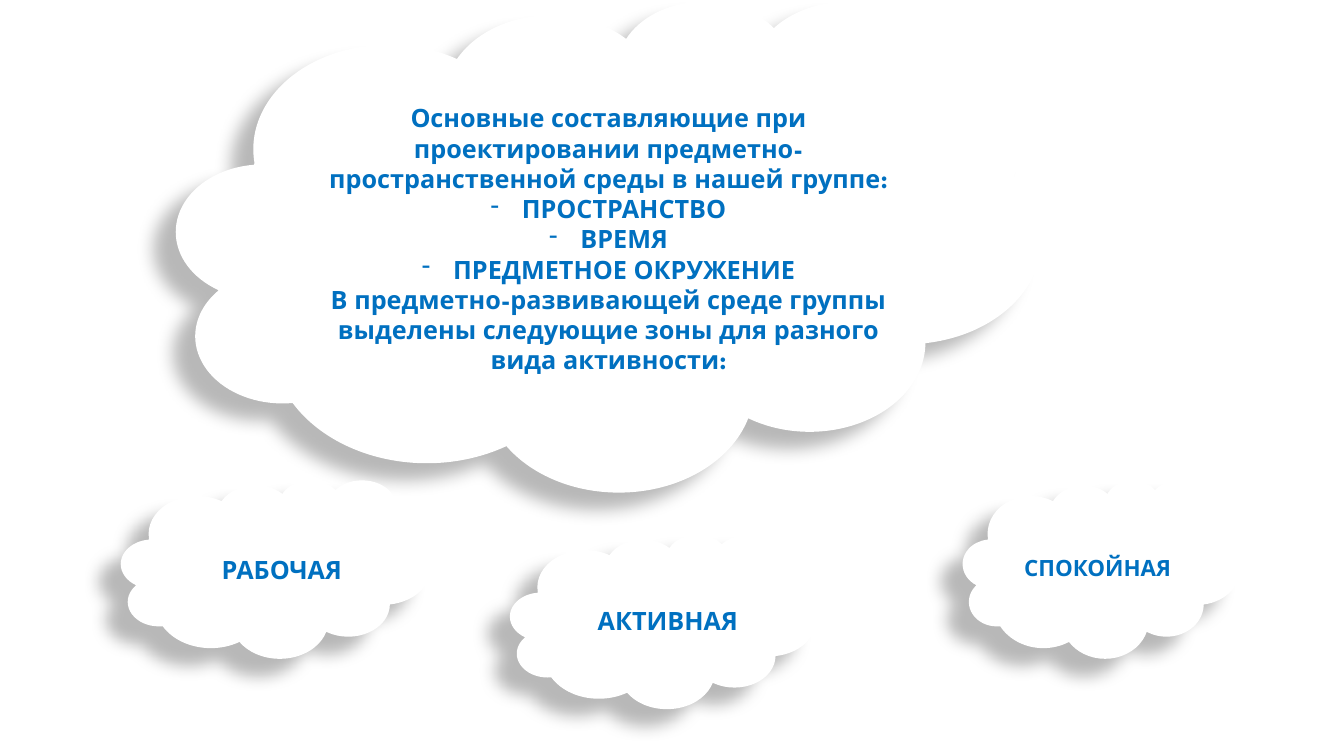
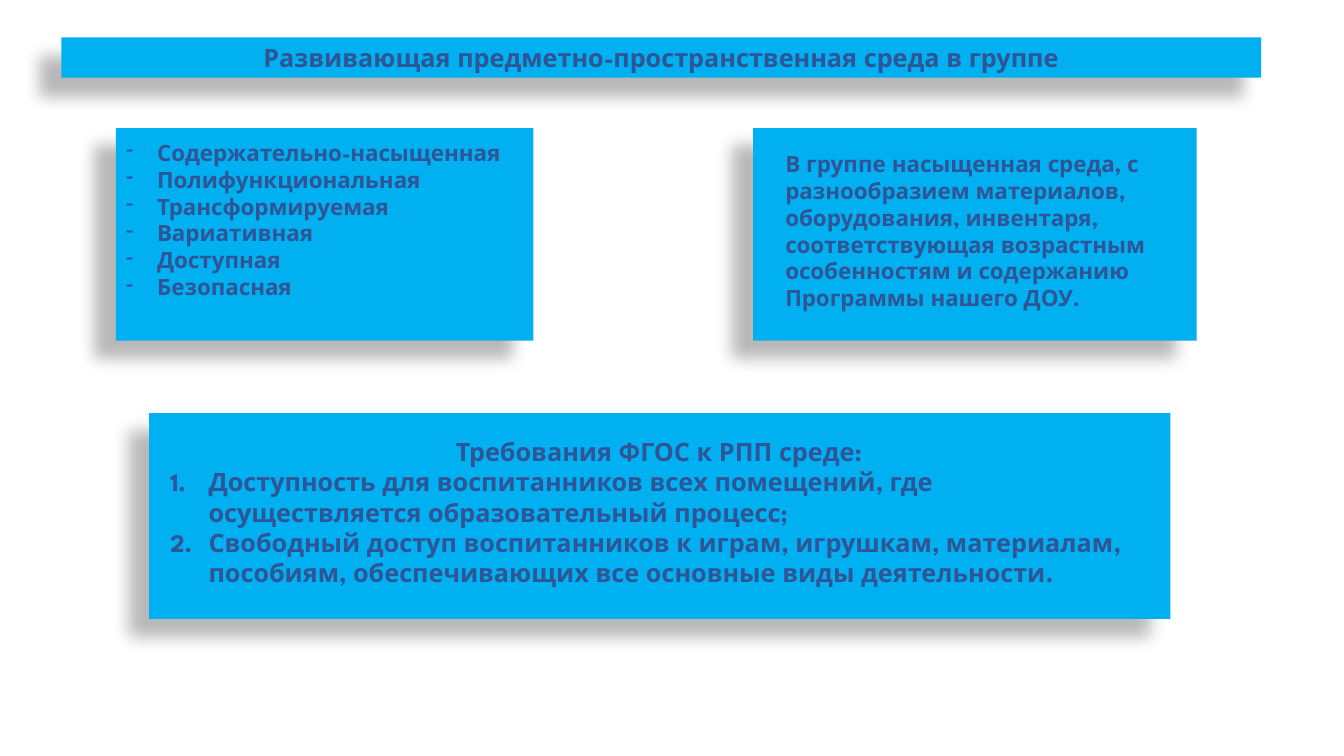
from dataclasses import dataclass

from lxml.etree import SubElement
from pptx import Presentation
from pptx.dml.color import RGBColor
from pptx.enum.shapes import MSO_SHAPE as Shape
from pptx.enum.text import MSO_ANCHOR as Anchor, MSO_AUTO_SIZE as AutoSize, PP_ALIGN as Align
from pptx.oxml.ns import qn
from pptx.util import Inches, Pt


@dataclass(frozen=True)
class Theme:
    """Colours, font, type sizes and shadow shared by the slides."""

    font: str = "League Spartan"
    white: RGBColor = RGBColor(0xFF, 0xFF, 0xFF)
    sky: RGBColor = RGBColor(0x00, 0xB0, 0xF0)
    blue: RGBColor = RGBColor(0x00, 0x70, 0xC0)
    navy: RGBColor = RGBColor(0x2F, 0x55, 0x97)
    large: int = 18
    small: int = 16
    shadow_blur: float = 11.8
    shadow_distance: float = 19.7
    shadow_angle: int = 141
    shadow_opacity: int = 28


THEME = Theme()
DASH = ("a:buChar", {"char": "-"}, 0.31)
NUMBER = ("a:buAutoNum", {"type": "arabicPeriod"}, 0.38)


def cast_shadow(shape):
    """Give a shape the soft shadow at its lower left."""
    shape.shadow.inherit = False
    effects = shape._element.spPr.find(qn("a:effectLst"))
    shadow = SubElement(
        effects,
        qn("a:outerShdw"),
        blurRad=str(Pt(THEME.shadow_blur)),
        dist=str(Pt(THEME.shadow_distance)),
        dir=str(THEME.shadow_angle * 60000),
        algn="ctr",
        rotWithShape="0",
    )
    colour = SubElement(shadow, qn("a:srgbClr"), val="000000")
    SubElement(colour, qn("a:alpha"), val=str(THEME.shadow_opacity * 1000))


def add_panel(page, kind, place, fill):
    """Add a borderless filled shape with a shadow."""
    panel = page.shapes.add_shape(kind, *map(Inches, place))
    panel.fill.solid()
    panel.fill.fore_color.rgb = fill
    panel.line.fill.background()
    cast_shadow(panel)
    return panel


def add_bullet(para, bullet):
    """Hang a dash or an automatic number before a paragraph."""
    tag, attributes, indent = bullet
    properties = para._p.get_or_add_pPr()
    properties.set("marL", str(Inches(indent)))
    properties.set("indent", str(-Inches(indent)))
    SubElement(properties, qn("a:buFontTx" if bullet is DASH else "a:buFont"),
               {} if bullet is DASH else {"typeface": THEME.font})
    SubElement(properties, qn(tag), attributes)


def write(frame, lines, size, colour):
    """Fill a text frame from (text, alignment, bullet) lines."""
    frame.word_wrap = True
    frame.text = "\n".join(text for text, _, _ in lines)
    for para, (_, align, bullet) in zip(frame.paragraphs, lines):
        para.alignment = align
        if bullet:
            add_bullet(para, bullet)
        for span in para.runs:
            span.font.name = THEME.font
            span.font.size = Pt(size)
            span.font.bold = True
            span.font.color.rgb = colour


def add_text(page, place, lines, size, colour):
    """Add a wrapped text box that grows with its text."""
    box = page.shapes.add_textbox(*map(Inches, place))
    write(box.text_frame, lines, size, colour)
    box.text_frame.auto_size = AutoSize.SHAPE_TO_FIT_TEXT


def build_zones(page):
    """Draw the main cloud and the three activity zones."""
    components = ["ПРОСТРАНСТВО", "ВРЕМЯ", "ПРЕДМЕТНОЕ ОКРУЖЕНИЕ"]
    main_lines = [
        ("Основные составляющие при проектировании предметно-пространственной среды в нашей группе:",
         Align.CENTER, None),
        *[(name, Align.CENTER, DASH) for name in components],
        ("В предметно-развивающей среде группы выделены следующие зоны для разного вида активности:",
         Align.CENTER, None),
    ]
    clouds = [
        ((1.75, 0, 8.58, 4.87), (3.14, 0.97, 5.79, 2.83), main_lines, THEME.large),
        ((1.2, 4.76, 3.08, 1.77), (2.1, 5.45, 1.99, 0.4),
         [("РАБОЧАЯ", Align.LEFT, None)], THEME.large),
        ((5.06, 5.3, 3.04, 1.73), (5.83, 5.96, 1.87, 0.4),
         [("АКТИВНАЯ", Align.LEFT, None)], THEME.large),
        ((9.55, 4.76, 2.76, 1.77), (10.06, 5.45, 1.73, 0.37),
         [("СПОКОЙНАЯ", Align.LEFT, None)], THEME.small),
    ]
    for cloud_place, text_place, lines, size in clouds:
        add_panel(page, Shape.CLOUD, cloud_place, THEME.white)
        add_text(page, text_place, lines, size, THEME.blue)


def build_environment(page):
    """Draw the title band and the three panels on the environment."""
    band = add_panel(page, Shape.RECTANGLE, (0.61, 0.37, 11.9, 0.4), THEME.sky)
    title = "Развивающая предметно-пространственная среда в группе"
    write(band.text_frame, [(title, Align.CENTER, None)], THEME.large, THEME.navy)
    band.text_frame.vertical_anchor = Anchor.MIDDLE

    qualities = ["Содержательно-насыщенная", "Полифункциональная", "Трансформируемая",
                 "Вариативная", "Доступная", "Безопасная"]
    summary = ("В группе насыщенная среда, с разнообразием материалов, оборудования, инвентаря, "
               "соответствующая возрастным особенностям и содержанию Программы нашего ДОУ.")
    requirements = [
        "Доступность для воспитанников всех помещений, где осуществляется образовательный процесс;",
        "Свободный доступ воспитанников к играм, игрушкам, материалам, пособиям, "
        "обеспечивающих все основные виды деятельности.",
    ]
    panels = [
        ((1.15, 1.27, 4.14, 2.11), (1.15, 1.33, 3.93, 1.99),
         [(quality, Align.LEFT, DASH) for quality in qualities], THEME.small),
        ((7.47, 1.27, 4.4, 2.11), (7.69, 1.44, 4.18, 1.72),
         [(summary, Align.LEFT, None)], THEME.small),
        ((1.48, 4.1, 10.13, 2.04), (1.59, 4.28, 9.89, 1.62),
         [("Требования ФГОС к РПП среде:", Align.CENTER, None),
          *[(text, Align.LEFT, NUMBER) for text in requirements]], THEME.large),
    ]
    for panel_place, text_place, lines, size in panels:
        add_panel(page, Shape.RECTANGLE, panel_place, THEME.sky)
        add_text(page, text_place, lines, size, THEME.navy)


def main():
    """Build and save the deck."""
    deck = Presentation()
    deck.slide_width, deck.slide_height = Inches(13.33), Inches(7.5)
    for build in (build_zones, build_environment):
        build(deck.slides.add_slide(deck.slide_layouts[6]))
    deck.save("out.pptx")


if __name__ == "__main__":
    main()
